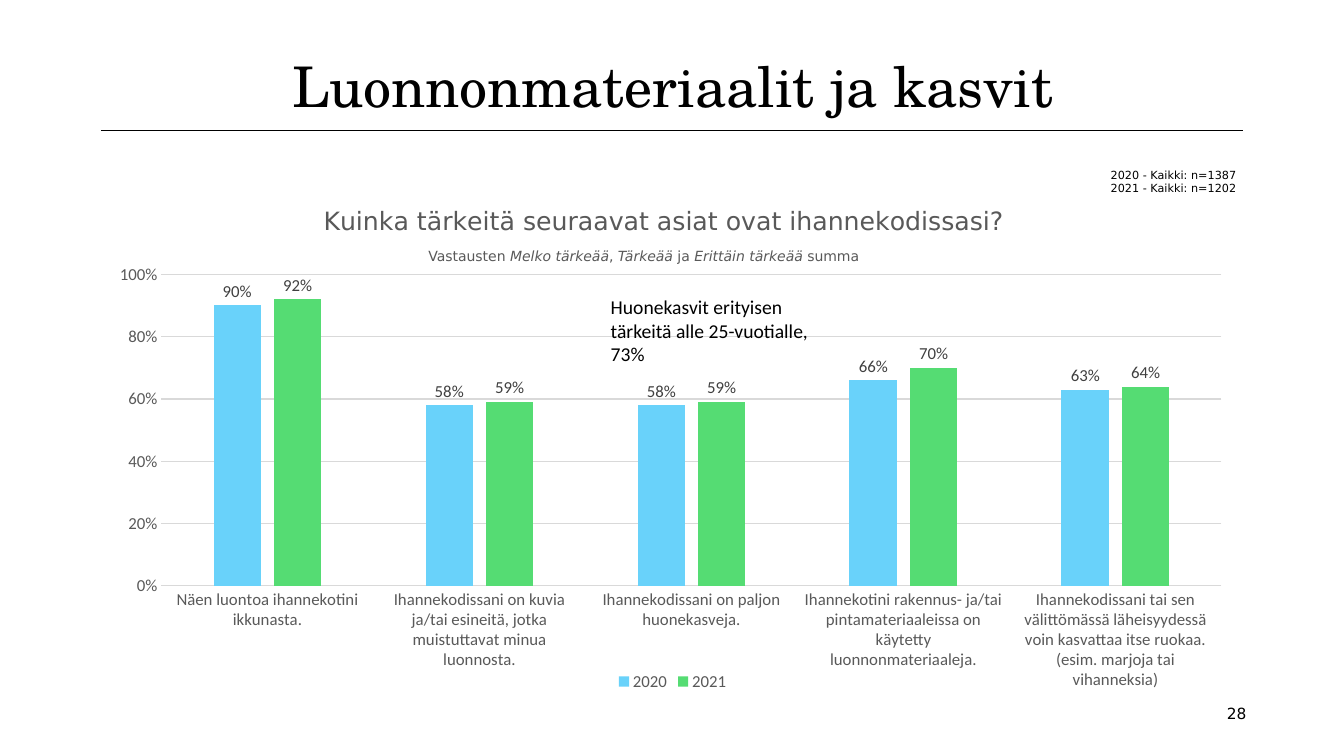
from lxml.etree import SubElement
from pptx import Presentation
from pptx.chart.data import CategoryChartData
from pptx.dml.color import RGBColor
from pptx.enum.chart import XL_CHART_TYPE, XL_LABEL_POSITION, XL_LEGEND_POSITION, XL_TICK_MARK
from pptx.enum.shapes import MSO_CONNECTOR
from pptx.enum.text import MSO_ANCHOR, PP_ALIGN
from pptx.oxml import parse_xml
from pptx.oxml.ns import nsdecls, qn
from pptx.util import Inches, Pt

THEME = {
    "black": RGBColor.from_string("000000"),
    "grey": RGBColor.from_string("595959"),
    "label": RGBColor.from_string("404040"),
    "grid": RGBColor.from_string("D9D9D9"),
    "bars": [RGBColor.from_string("69D2FA"), RGBColor.from_string("55DC73")],
    "serif": "TeX Gyre Schola", "sans": "DejaVu Sans", "body": "Calibri",
    "title": Pt(40), "question": Pt(18), "note": Pt(14), "chart": Pt(12),
    "page": Pt(11), "sub": Pt(10), "base": Pt(8),
}

prs = Presentation()
prs.slide_width, prs.slide_height = Inches(13.33), Inches(7.5)
s = prs.slides.add_slide(prs.slide_layouts[6])

# Grid of 100 columns by 100 rows
COL, ROW = prs.slide_width / 100, prs.slide_height / 100
LEFT, WIDTH = 7.6, 84.9


def style(font, size, face, color="black", **extra):
    for name, value in {"size": THEME[size], "name": THEME[face], "bold": False, **extra}.items():
        setattr(font, name, value)
    font.color.rgb = THEME[color]


def place(parent, index, **values):
    for old in parent.findall(qn("c:layout")):
        parent.remove(old)
    layout = parse_xml(f"<c:layout {nsdecls('c')}><c:manualLayout/></c:layout>")
    for name, value in values.items():
        SubElement(layout[0], qn(f"c:{name}")).set("val", str(value))
    parent.insert(index, layout)


# Rule under the heading
rule = s.shapes.add_connector(MSO_CONNECTOR.STRAIGHT, int(7.5 * COL), int(17.2 * ROW),
                              int(92.5 * COL), int(17.2 * ROW))
rule.line.width, rule.line.color.rgb = Pt(0.5), THEME["black"]
SubElement(rule._element.spPr, qn("a:effectLst"))

# Chart data
data = CategoryChartData(number_format="0%")
data.categories = [
    "Näen luontoa ihannekotini ikkunasta.",
    "Ihannekodissani on kuvia ja/tai esineitä, jotka muistuttavat minua luonnosta.",
    "Ihannekodissani on paljon huonekasveja.",
    "Ihannekotini rakennus- ja/tai pintamateriaaleissa on käytetty luonnonmateriaaleja.",
    "Ihannekodissani tai sen välittömässä läheisyydessä voin kasvattaa itse ruokaa. "
    "(esim. marjoja tai vihanneksia)",
]
data.add_series("2020", [0.9, 0.58, 0.58, 0.66, 0.63])
data.add_series("2021", [0.92, 0.59, 0.59, 0.7, 0.64])
chart = s.shapes.add_chart(XL_CHART_TYPE.COLUMN_CLUSTERED, int(LEFT * COL), int(23.73 * ROW),
                           int(WIDTH * COL), int(68.27 * ROW), data).chart
style(chart.font, "sub", "body")

# Chart title and plot position
tf = chart.chart_title.text_frame
r = tf.paragraphs[0].add_run()
r.text = "Kuinka tärkeitä seuraavat asiat ovat ihannekodissasi?"
style(r.font, "question", "sans", "grey")
place(chart.chart_title._element, 1, xMode="edge", yMode="edge", x=0.19, y=0.04)
place(chart._chartSpace.chart.plotArea, 0, layoutTarget="inner", xMode="edge", yMode="edge",
      x=0.052, y=0.184, w=0.929, h=0.604)

# Legend and axes
chart.has_legend = True
chart.legend.position = XL_LEGEND_POSITION.BOTTOM
chart.legend.include_in_layout = False
style(chart.legend.font, "chart", "body", "grey")
cat, val = chart.category_axis, chart.value_axis
for axis in (cat, val):
    axis.major_tick_mark = axis.minor_tick_mark = XL_TICK_MARK.NONE
    style(axis.tick_labels.font, "chart", "body", "grey")
for name, value in {"minimum_scale": 0, "maximum_scale": 1, "major_unit": 0.2,
                    "has_major_gridlines": True}.items():
    setattr(val, name, value)
val.tick_labels.number_format, val.tick_labels.number_format_is_linked = "0%", False
val.format.line.fill.background()
for line in (cat.format.line, val.major_gridlines.format.line):
    line.width, line.color.rgb = Pt(0.75), THEME["grid"]

# Bars and their labels
plot = chart.plots[0]
plot.gap_width, plot.overlap, plot.vary_by_categories = 219, -27, False
for series, color in zip(plot.series, THEME["bars"]):
    series.format.fill.solid()
    series.format.fill.fore_color.rgb = color
    for name, value in {"show_value": True, "number_format": "0%",
                        "number_format_is_linked": False,
                        "position": XL_LABEL_POSITION.OUTSIDE_END}.items():
        setattr(series.data_labels, name, value)
    style(series.data_labels.font, "chart", "body", "label")

# Texts: box in grid units, paragraphs of (text, italic) runs, font, frame and paragraph formats
SPACED = {"space_before": Pt(10), "space_after": Pt(10)}
texts = [
    ((LEFT, 3.87, WIDTH, 11.87), [[("Luonnonmateriaalit ja kasvit", False)]],
     ("title", "serif", "black"),
     {"vertical_anchor": MSO_ANCHOR.BOTTOM, "margin_left": 0, "margin_right": 0,
      "margin_top": 0, "margin_bottom": 0}, {"alignment": PP_ALIGN.CENTER, **SPACED}),
    ((81.9, 21.6, 12.3, 6.67),
     [[("2020 - Kaikki: n=1387", False)], [("2021 - Kaikki: n=1202", False)]],
     ("base", "sans", "black"), {}, {}),
    ((31.13, 32.13, 34.43, 3.6),
     [[("Vastausten ", False), ("Melko tärkeää", True), (", ", False), ("Tärkeää ", True),
       ("ja ", False), ("Erittäin tärkeää ", True), ("summa", False)]],
     ("sub", "sans", "grey"), {"word_wrap": False}, {}),
    ((44.7, 38.4, 16.5, 10.8),
     [[("Huonekasvit erityisen tärkeitä alle 25-vuotialle, 73%", False)]],
     ("note", "body", "black"), {}, {}),
    ((67, 92.27, 26.48, 4.13), [[("28", False)]], ("page", "sans", "black"),
     {"vertical_anchor": MSO_ANCHOR.MIDDLE}, {"alignment": PP_ALIGN.RIGHT, **SPACED}),
]
for (x, y, w, h), paragraphs, font, frame_format, paragraph_format in texts:
    tf = s.shapes.add_textbox(int(x * COL), int(y * ROW), int(w * COL), int(h * ROW)).text_frame
    for name, value in {"word_wrap": True, **frame_format}.items():
        setattr(tf, name, value)
    for i, runs in enumerate(paragraphs):
        p = tf.add_paragraph() if i else tf.paragraphs[0]
        for name, value in paragraph_format.items():
            setattr(p, name, value)
        for text, italic in runs:
            r = p.add_run()
            r.text = text
            style(r.font, *font, italic=italic)

prs.save("out.pptx")
